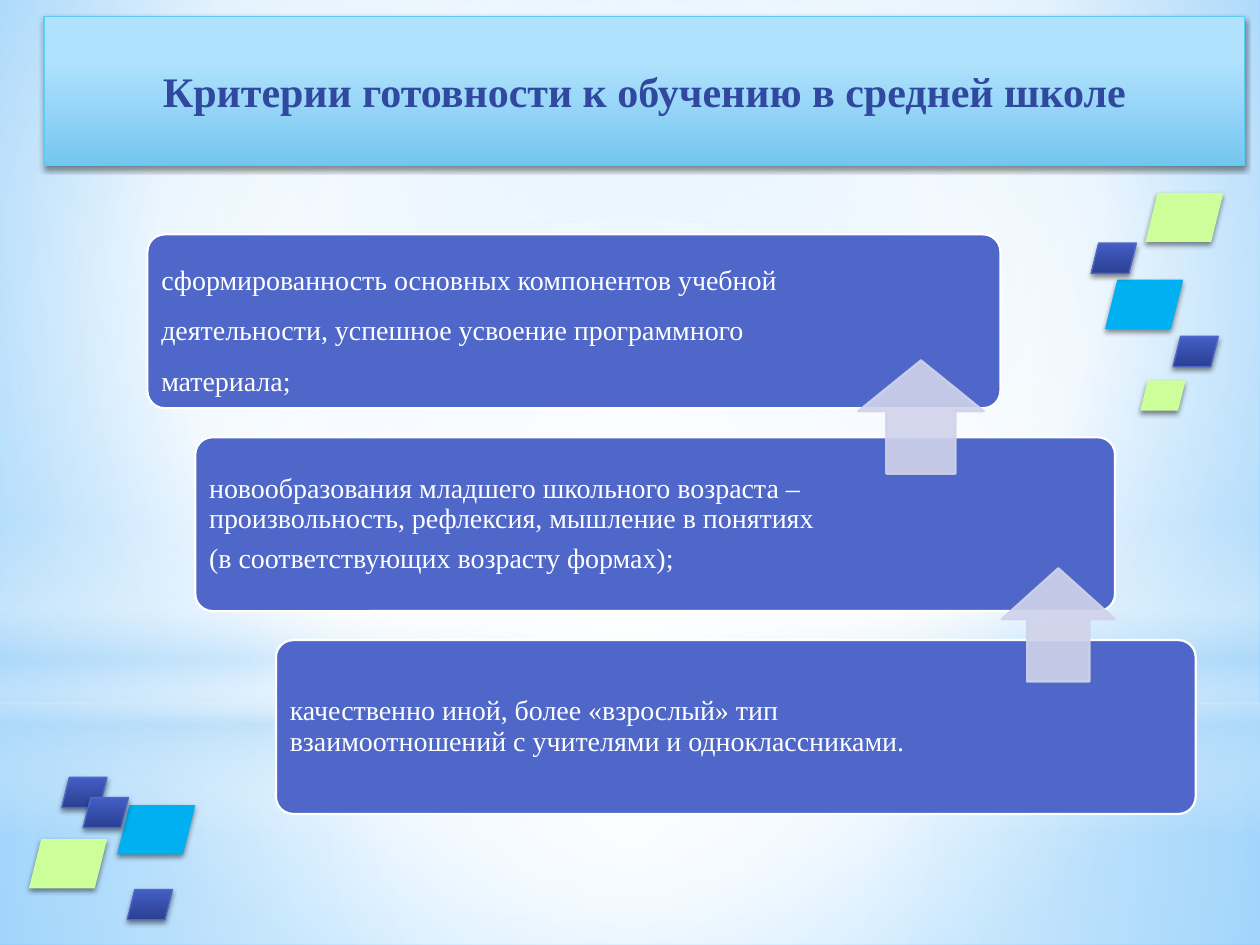
"""Build a slide with three ascending readiness criteria."""
from dataclasses import dataclass
from typing import Optional, Union

from lxml import etree
from pptx import Presentation
from pptx.dml.color import RGBColor
from pptx.enum.shapes import MSO_SHAPE
from pptx.enum.text import MSO_ANCHOR, PP_ALIGN
from pptx.oxml.ns import qn
from pptx.util import Inches, Pt

RECTANGLE = MSO_SHAPE.RECTANGLE
ROUNDED = MSO_SHAPE.ROUNDED_RECTANGLE
OVAL = MSO_SHAPE.OVAL
ARROW = MSO_SHAPE.UP_ARROW
PARALLELOGRAM = MSO_SHAPE.PARALLELOGRAM
MIDDLE = MSO_ANCHOR.MIDDLE
LEFT, CENTER = PP_ALIGN.LEFT, PP_ALIGN.CENTER

WIDTH, HEIGHT = Inches(10), Inches(7.5)
COLUMNS, ROWS = 100, 75
FONT = "Times New Roman"
WHITE, INDIGO, SKY, LIME = "FFFFFF", "4E67C8", "00B0F0", "CCFF99"
PALE_BLUE, LAVENDER = "B4DCFA", "D0D3EB"
CENTRE = (50, 50, 50, 50)


@dataclass(frozen=True)
class Area:
    """A rectangle in grid columns and rows."""
    column: float
    row: float
    columns: float
    rows: float


@dataclass(frozen=True)
class Gradient:
    """Stops of position, colour and opacity; linear downwards without a focus."""
    stops: tuple
    focus: Optional[tuple] = None


@dataclass(frozen=True)
class Criterion:
    """One step: its left column, width, right text margin, spacing and text."""
    column: float
    columns: float
    right_margin: float
    line_spacing: float
    text: str


@dataclass(frozen=True)
class Tile:
    """A decorative parallelogram."""
    column: float
    row: float
    size: tuple
    fill: Union[str, Gradient]


Fill = Union[str, Gradient]
LARGE, SMALL = (6.2, 3.9), (3.6, 2.4)
NAVY = Gradient(((0, "435EC5", 100), (100, "2B4092", 100)))
TITLE_FILL = Gradient(((28, "B1E2FD", 100), (100, "76C6F1", 100)))
BACKGROUND = Gradient(((0, "9ED5FF", 100), (60, WHITE, 100), (100, "5BB9FF", 100)),
                      (20, 10, 20, 60))
GLOWS = [
    (RECTANGLE, Area(0, 55.8, 100, 19.2),
     Gradient(((0, WHITE, 91), (37, WHITE, 76), (100, PALE_BLUE, 79)), CENTRE)),
    (RECTANGLE, Area(0, 0, 100, 55.8),
     Gradient(((0, WHITE, 89), (48, WHITE, 62), (100, PALE_BLUE, 79)), CENTRE)),
    (RECTANGLE, Area(0, 41.2, 100, 25),
     Gradient(((0, WHITE, 0), (29, WHITE, 30), (45, PALE_BLUE, 40),
               (55, WHITE, 26), (65, PALE_BLUE, 60), (100, WHITE, 0)))),
    (OVAL, Area(0, 17.5, 100, 55.8),
     Gradient(((0, WHITE, 100), (56, WHITE, 0)), CENTRE)),
]
TITLE = "Критерии готовности к обучению в средней школе"
CRITERIA = [
    Criterion(11.7, 67.7, 1.38, 1.5,
              "сформированность основных компонентов учебной деятельности, "
              "успешное усвоение программного материала;"),
    Criterion(15.5, 73, 1.62, 0.9,
              "новообразования младшего школьного возраста – произвольность, "
              "рефлексия, мышление в понятиях\n(в соответствующих возрасту формах);"),
    Criterion(21.9, 73, 1.62, 0.9,
              "качественно иной, более «взрослый» тип взаимоотношений "
              "с учителями и одноклассниками."),
]
FIRST_ROW, ROW_STEP, BOX_ROWS = 18.6, 16.1, 13.8
ARROWS = [Area(68.1, 28.6, 10, 9), Area(79.5, 45.1, 9, 9)]
TILES = [
    Tile(9.3, 63.9, LARGE, SKY),
    Tile(4.9, 61.7, SMALL, NAVY),
    Tile(2.3, 66.6, LARGE, LIME),
    Tile(10.1, 70.6, SMALL, NAVY),
    Tile(90.9, 15.3, LARGE, LIME),
    Tile(87.7, 22.2, LARGE, SKY),
    Tile(86.6, 19.3, SMALL, NAVY),
    Tile(93.1, 26.7, SMALL, NAVY),
    Tile(90.5, 30.2, SMALL, LIME),
    Tile(6.6, 63.3, SMALL, NAVY),
]


def rgb(value: str) -> RGBColor:
    """Turn a hex string into a colour."""
    return RGBColor.from_string(value)


def add_child(parent, tag: str, **attributes):
    """Append an XML element with the given attributes."""
    return etree.SubElement(parent, qn(tag),
                            {name: str(value) for name, value in attributes.items()})


def add_color(parent, color: str, opacity: int) -> None:
    """Append a colour with an opacity in percent."""
    node = add_child(parent, "a:srgbClr", val=color)
    add_child(node, "a:alpha", val=opacity * 1000)


def apply_fill(fill, owner, paint: Fill) -> None:
    """Fill with a plain colour, or swap the plain fill for a gradient."""
    fill.solid()
    if isinstance(paint, str):
        fill.fore_color.rgb = rgb(paint)
        return
    solid = owner.find(".//" + qn("a:solidFill"))
    gradient = etree.Element(qn("a:gradFill"), rotWithShape="1")
    stops = add_child(gradient, "a:gsLst")
    for position, color, opacity in paint.stops:
        add_color(add_child(stops, "a:gs", pos=position * 1000), color, opacity)
    if paint.focus:
        circle = add_child(gradient, "a:path", path="circle")
        sides = {side: share * 1000 for side, share in zip("ltrb", paint.focus)}
        add_child(circle, "a:fillToRect", **sides)
    else:
        add_child(gradient, "a:lin", ang=5400000, scaled=0)
    solid.getparent().replace(solid, gradient)


def add_block(slide, kind, area: Area, paint: Fill,
              line: Optional[str] = None, line_width: float = 0.75):
    """Draw a preset shape on the grid without a shadow."""
    shape = slide.shapes.add_shape(
        kind, round(WIDTH * area.column / COLUMNS), round(HEIGHT * area.row / ROWS),
        round(WIDTH * area.columns / COLUMNS), round(HEIGHT * area.rows / ROWS))
    shape.shadow.inherit = False
    apply_fill(shape.fill, shape.element.spPr, paint)
    if line:
        shape.line.color.rgb = rgb(line)
        shape.line.width = Pt(line_width)
    else:
        shape.line.fill.background()
    return shape


def add_shadow(shape) -> None:
    """Give a shape a soft shadow below it."""
    effects = shape.element.spPr.find(qn("a:effectLst"))
    shadow = add_child(effects, "a:outerShdw", blurRad=Pt(3.1), dist=Pt(1.8),
                       dir=5400000, rotWithShape=0)
    add_color(shadow, "000000", 45)


def write_text(shape, text: str, size: float, color: str, alignment,
               bold: bool = False, line_spacing: float = 1, space_after: float = 0) -> None:
    """Set and format the text of a shape."""
    frame = shape.text_frame
    frame.word_wrap = True
    frame.vertical_anchor = MIDDLE
    frame.text = text
    for paragraph in frame.paragraphs:
        paragraph.alignment = alignment
        paragraph.line_spacing = line_spacing
        paragraph.space_after = Pt(space_after)
        for run in paragraph.runs:
            run.font.name = FONT
            run.font.size = Pt(size)
            run.font.bold = bold
            run.font.color.rgb = rgb(color)


def add_criterion(slide, criterion: Criterion, index: int) -> None:
    """Draw one step of the staircase."""
    area = Area(criterion.column, FIRST_ROW + index * ROW_STEP, criterion.columns, BOX_ROWS)
    box = add_block(slide, ROUNDED, area, INDIGO, WHITE, 1.25)
    box.adjustments[0] = 0.1
    frame = box.text_frame
    frame.margin_left = frame.margin_top = frame.margin_bottom = Inches(0.07)
    frame.margin_right = Inches(criterion.right_margin)
    write_text(box, criterion.text, 16, WHITE, LEFT,
               line_spacing=criterion.line_spacing, space_after=5.6)


def add_arrow(slide, area: Area) -> None:
    """Draw a translucent arrow pointing up to the next step."""
    arrow = add_block(slide, ARROW, area, LAVENDER, LAVENDER, 1.25)
    arrow.adjustments[0], arrow.adjustments[1] = 0.55, 0.45
    for color in arrow.element.spPr.iter(qn("a:srgbClr")):
        add_child(color, "a:alpha", val=90000)


def add_tile(slide, tile: Tile) -> None:
    """Draw a decorative parallelogram with a shadow."""
    line = INDIGO if tile.fill == NAVY else None
    add_shadow(add_block(slide, PARALLELOGRAM, Area(tile.column, tile.row, *tile.size),
                         tile.fill, line))


def main() -> None:
    """Build and save the presentation."""
    presentation = Presentation()
    presentation.slide_width, presentation.slide_height = WIDTH, HEIGHT
    slide = presentation.slides.add_slide(presentation.slide_layouts[6])
    apply_fill(slide.background.fill, slide.element, BACKGROUND)
    for kind, area, paint in GLOWS:
        add_block(slide, kind, area, paint)
    title = add_block(slide, RECTANGLE, Area(3.5, 1.3, 95.3, 11.8), TITLE_FILL, "5ECCF3")
    add_shadow(title)
    write_text(title, TITLE, 24, "31489F", CENTER, bold=True)
    for index, criterion in enumerate(CRITERIA):
        add_criterion(slide, criterion, index)
    for area in ARROWS:
        add_arrow(slide, area)
    for tile in TILES:
        add_tile(slide, tile)
    presentation.save("out.pptx")


if __name__ == "__main__":
    main()
